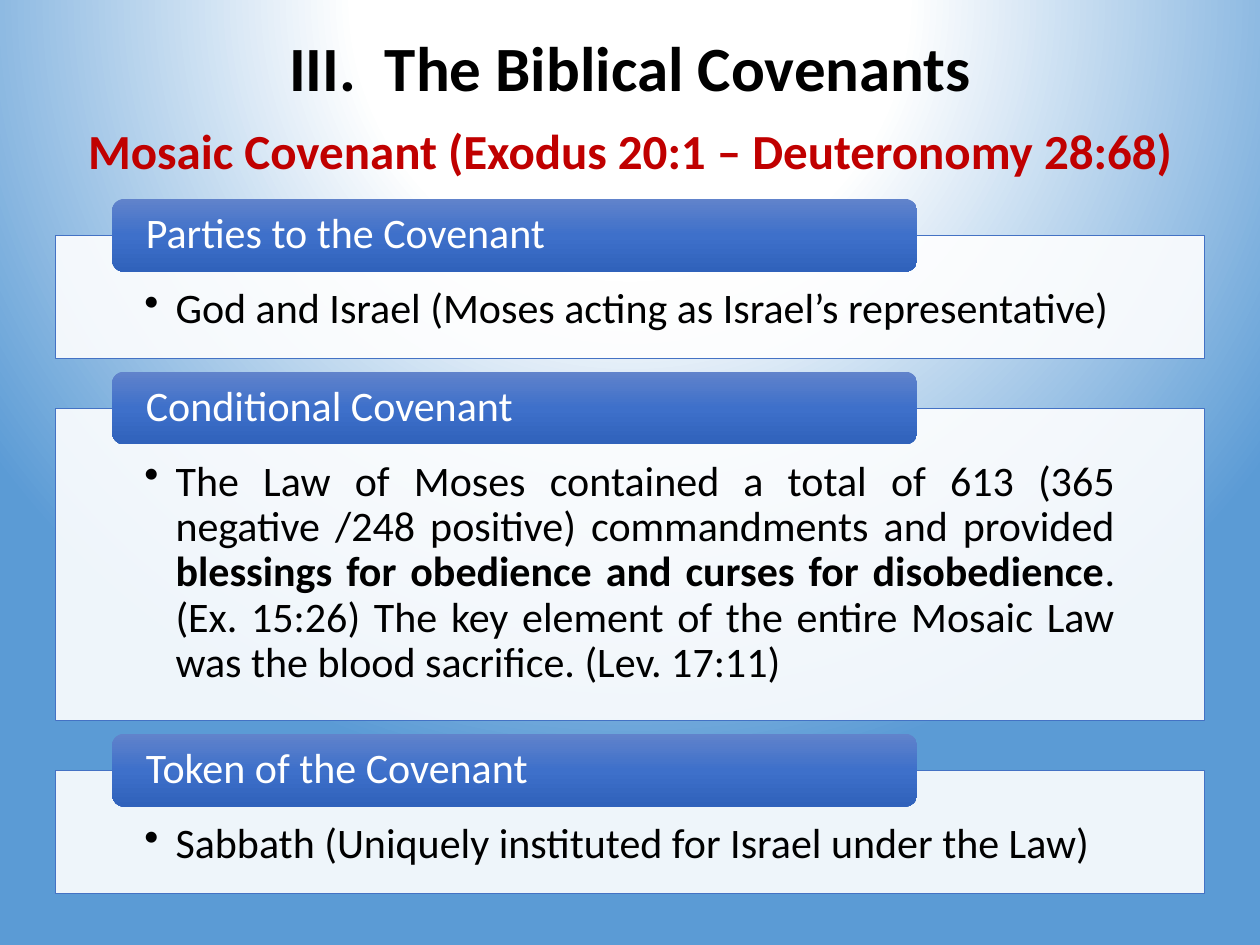
from lxml import etree
from pptx import Presentation
from pptx.dml.color import RGBColor
from pptx.enum.shapes import MSO_SHAPE
from pptx.enum.text import MSO_ANCHOR, MSO_AUTO_SIZE, PP_ALIGN
from pptx.oxml.ns import qn
from pptx.util import Cm, Pt

RECTANGLE, ROUNDED = MSO_SHAPE.RECTANGLE, MSO_SHAPE.ROUNDED_RECTANGLE
TOP, MIDDLE = MSO_ANCHOR.TOP, MSO_ANCHOR.MIDDLE
LEFT, CENTER, JUSTIFY = PP_ALIGN.LEFT, PP_ALIGN.CENTER, PP_ALIGN.JUSTIFY
NO_AUTOFIT = MSO_AUTO_SIZE.NONE

BLACK, WHITE, RED, BLUE = "000000", "FFFFFF", "C00000", "4472C4"
SKY_STOPS = [(0, WHITE), (35, WHITE), (100, "5B9BD5")]
HEADING_STOPS = [(0, "6183CB"), (50, "3E70CA"), (100, "3062BB")]


def color(value):
    return RGBColor.from_string(value)


def add_element(parent, tag, **attributes):
    element = etree.SubElement(parent, qn(tag))
    for name, value in attributes.items():
        element.set(name, str(value))
    return element


class SlideBuilder:
    font = "Calibri"

    def __init__(self, slide):
        self.slide = slide

    def gradient(self, fill, owner, stops):
        """Give the fill new stops and return its gradient element."""
        fill.gradient()
        gradient = owner.element.find(".//" + qn("a:gradFill"))
        for child in list(gradient):
            gradient.remove(child)
        stop_list = add_element(gradient, "a:gsLst")
        for position, value in stops:
            stop = add_element(stop_list, "a:gs", pos=position * 1000)
            add_element(stop, "a:srgbClr", val=value)
        return gradient

    def background(self, stops):
        gradient = self.gradient(self.slide.background.fill, self.slide, stops)
        circle = add_element(gradient, "a:path", path="circle")
        add_element(circle, "a:fillToRect", l=50000, t=-80000, r=50000, b=180000)

    def add_text(self, shape, runs, size, value, align=LEFT, anchor=TOP,
                 insets=(0.25, 0.13, 0.25, 0.13), spacing=0.9):
        """Fill a shape with one paragraph of (text, bold) runs."""
        frame = shape.text_frame
        frame.word_wrap = True
        frame.auto_size = NO_AUTOFIT
        frame.vertical_anchor = anchor
        (frame.margin_left, frame.margin_top,
         frame.margin_right, frame.margin_bottom) = map(Cm, insets)
        paragraph = frame.paragraphs[0]
        paragraph.alignment = align
        paragraph.line_spacing = spacing
        paragraph.space_before = Pt(0)
        for text, bold in runs:
            run = paragraph.add_run()
            run.text = text
            run.font.name = self.font
            run.font.size = Pt(size)
            run.font.bold = bold
            run.font.color.rgb = color(value)
        return paragraph

    def bullet(self, paragraph, indent, tag, **attributes):
        properties = paragraph._p.get_or_add_pPr()
        properties.set("marL", str(Cm(indent)))
        properties.set("indent", str(-Cm(indent)))
        add_element(properties, tag, **attributes)

    def title(self, text):
        shape = self.slide.shapes.title
        shape.left, shape.top = Cm(3.18), Cm(0.56)
        shape.width, shape.height = Cm(19.05), Cm(1.73)
        paragraph = self.add_text(shape, [(text, True)], 36, BLACK, CENTER, MIDDLE)
        self.bullet(paragraph, 1.93, "a:buAutoNum", type="romanUcPeriod", startAt=3)

    def subtitle(self, text):
        box = self.slide.shapes.add_textbox(Cm(1.45), Cm(2.29), Cm(22.5), Cm(1.45))
        self.add_text(box, [(text, True)], 28, RED, CENTER, spacing=1.0)

    def box(self, kind, left, top, width, height):
        shape = self.slide.shapes.add_shape(
            kind, Cm(left), Cm(top), Cm(width), Cm(height))
        shape.shadow.inherit = False
        return shape

    def panel(self, top, height, runs, align):
        shape = self.box(RECTANGLE, 1.11, top, 23.17, height)
        shape.fill.solid()
        shape.fill.fore_color.rgb = color(WHITE)
        add_element(shape.element.find(".//" + qn("a:srgbClr")), "a:alpha", val=90000)
        shape.line.color.rgb = color(BLUE)
        shape.line.width = Pt(0.5)
        paragraph = self.add_text(shape, runs, 24, BLACK, align,
                                  insets=(1.8, 1.04, 1.8, 0.48))
        self.bullet(paragraph, 0.63, "a:buChar", char="•")

    def heading(self, top, text):
        shape = self.box(ROUNDED, 2.26, top, 16.23, 1.47)
        gradient = self.gradient(shape.fill, shape, HEADING_STOPS)
        add_element(gradient, "a:lin", ang=90 * 60000, scaled=0)
        shape.line.fill.background()
        self.add_text(shape, [(text, False)], 24, WHITE, anchor=MIDDLE,
                      insets=(0.61, 0, 0.61, 0))


def main():
    presentation = Presentation()
    presentation.slide_width, presentation.slide_height = Cm(25.4), Cm(19.05)
    title_only = presentation.slide_layouts[5]
    builder = SlideBuilder(presentation.slides.add_slide(title_only))

    # Background and headings
    builder.background(SKY_STOPS)
    builder.title("The Biblical Covenants")
    builder.subtitle("Mosaic Covenant (Exodus 20:1 – Deuteronomy 28:68)")

    # Panels, each with a heading overlapping its top edge
    sections = [
        ("Parties to the Covenant", 2.48, LEFT,
         [("God and Israel (Moses acting as Israel’s representative)", False)]),
        ("Conditional Covenant", 6.3, JUSTIFY,
         [("The Law of Moses contained a total of 613 (365 negative /248 positive) "
           "commandments and provided ", False),
          ("blessings for obedience and curses for disobedience", True),
          (". (Ex. 15:26) The key element of the entire Mosaic Law was the blood "
           "sacrifice. (Lev. 17:11)", False)]),
        ("Token of the Covenant", 2.48, LEFT,
         [("Sabbath (Uniquely instituted for Israel under the Law)", False)]),
    ]
    top, gap, overlap = 4.75, 1.0, 0.74
    for heading, height, align, runs in sections:
        builder.panel(top, height, runs, align)
        builder.heading(top - overlap, heading)
        top += height + gap

    presentation.save("out.pptx")


if __name__ == "__main__":
    main()
